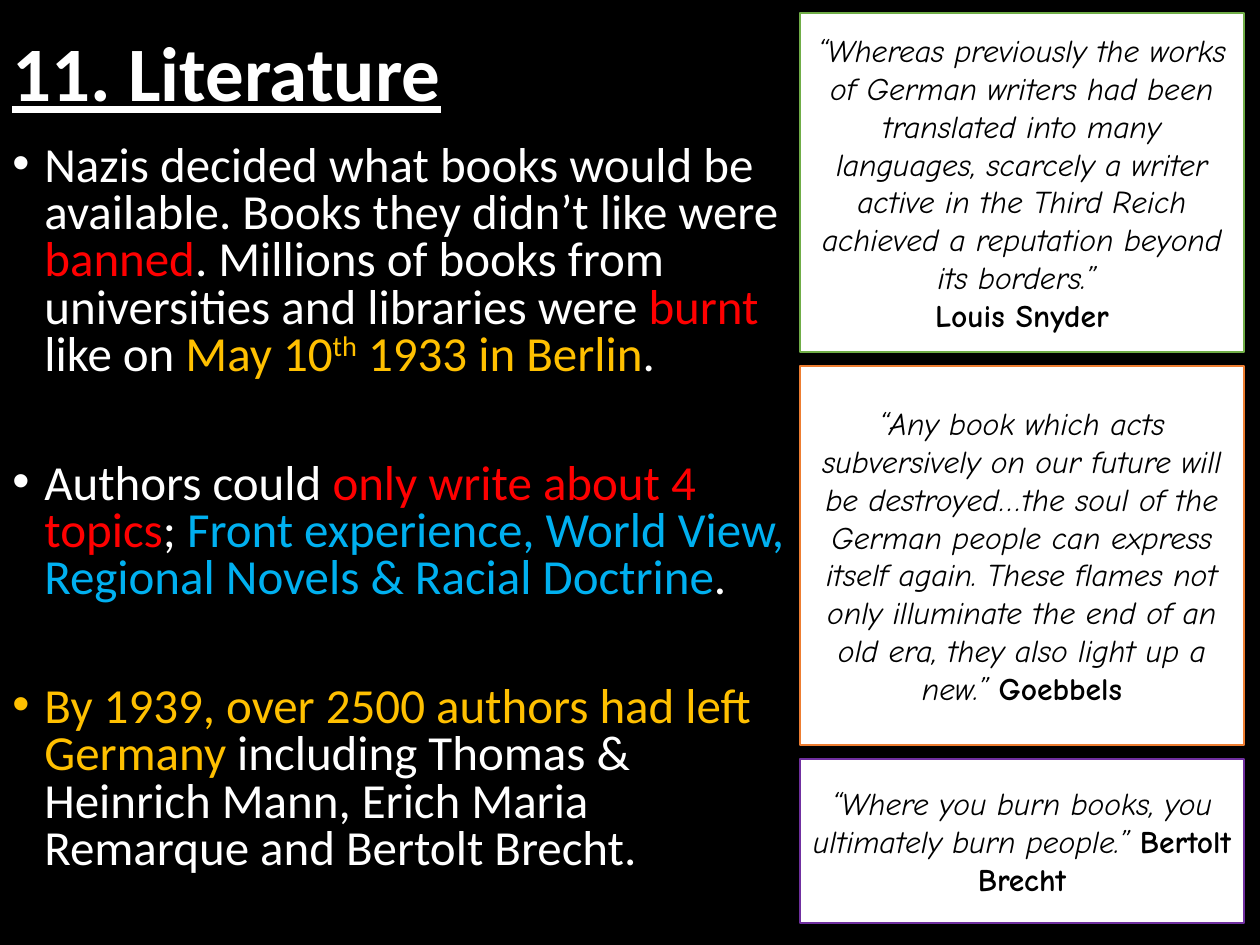
from pptx import Presentation
from pptx.dml.color import RGBColor as RGB
from pptx.enum.shapes import MSO_SHAPE as Form
from pptx.enum.text import MSO_ANCHOR as Anchor, PP_ALIGN as Align
from pptx.util import Pt
from lxml.etree import SubElement as Sub
from pptx.oxml.ns import qn

PX = 914400 / 126
WHITE, BLACK, RED, GOLD, BLUE = "FFFFFF", "000000", "FF0000", "FFC000", "00B0F0"


def emu(*px):
    return [round(n * PX) for n in px]


def hue(code):
    return RGB.from_string(code)


def put(obj, vals):
    for name, val in vals.items():
        setattr(obj, name, val)


class Deck:
    title = dict(name="Calibri", size=Pt(44), bold=True, underline=True)
    body = dict(name="Calibri", size=Pt(28))
    quote = dict(name="Comic Neue", size=Pt(18), italic=True)
    cite = dict(name="Comic Neue", size=Pt(18), bold=True)

    def __init__(self, wide, high):
        self.prs = Presentation()
        self.prs.slide_width, self.prs.slide_height = emu(wide, high)
        self.slide = self.prs.slides.add_slide(self.prs.slide_layouts[6])
        fill = self.slide.background.fill
        fill.solid()
        fill.fore_color.rgb = hue(BLACK)

    def run(self, para, text, color, style, base=0):
        run = para.add_run()
        run.text = text
        put(run.font, style)
        run.font.color.rgb = hue(color)
        if base:
            run.font._element.set("baseline", str(base * 1000))

    def box(self, *spot):
        frame = self.slide.shapes.add_textbox(*emu(*spot)).text_frame
        frame.word_wrap = True
        return frame

    def head(self, text, *spot):
        frame = self.box(*spot)
        frame.vertical_anchor = Anchor.MIDDLE
        para = frame.paragraphs[0]
        para.line_spacing = 0.9
        self.run(para, text, WHITE, self.title)

    def points(self, items, *spot):
        frame = self.box(*spot)
        for num, runs in enumerate(items):
            para = frame.add_paragraph() if num else frame.paragraphs[0]
            put(para, dict(line_spacing=0.8, space_before=Pt(47 if num else 0)))
            props = para._p.get_or_add_pPr()
            put_in = emu(32)[0]
            props.set("marL", str(put_in))
            props.set("indent", str(-put_in))
            Sub(props, qn("a:buFont"), typeface="Arial")
            Sub(props, qn("a:buChar"), char="•")
            for text, color, *base in runs:
                self.run(para, text, color, self.body, *base)

    def card(self, edge, words, name, apart, *spot):
        shape = self.slide.shapes.add_shape(Form.RECTANGLE, *emu(*spot))
        shape.shadow.inherit = False
        shape.fill.solid()
        shape.fill.fore_color.rgb = hue(WHITE)
        shape.line.color.rgb = hue(edge)
        shape.line.width = Pt(1)
        frame = shape.text_frame
        put(frame, dict(word_wrap=True, vertical_anchor=Anchor.MIDDLE))
        para = frame.paragraphs[0]
        self.run(para, words, BLACK, self.quote)
        if apart:
            para = frame.add_paragraph()
        self.run(para, name, BLACK, self.cite)
        for para in frame.paragraphs:
            para.alignment = Align.CENTER


POINTS = [
    [("Nazis decided what books would be available. Books they didn’t like were ", WHITE),
     ("banned", RED),
     (". Millions of books from universities and libraries were ", WHITE),
     ("burnt ", RED), ("like on ", WHITE),
     ("May 10", GOLD), ("th", GOLD, 30), (" 1933 in Berlin", GOLD), (".", WHITE)],
    [("Authors could ", WHITE), ("only write about 4 topics", RED), ("; ", WHITE),
     ("Front experience, World View, Regional Novels & Racial Doctrine", BLUE),
     (".", WHITE)],
    [("By 1939, over 2500 authors had left Germany ", GOLD),
     ("including Thomas & Heinrich Mann, Erich Maria Remarque and Bertolt Brecht.", WHITE)],
]

# Height, edge, words, speaker, speaker on a line of its own
QUOTES = [
    (339, "70AD47", "“Whereas previously the works of German writers had been translated "
     "into many languages, scarcely a writer active in the Third Reich achieved a "
     "reputation beyond its borders.” ", "Louis Snyder", True),
    (379, "ED7D31", "“Any book which acts subversively on our future will be "
     "destroyed…the soul of the German people can express itself again. These flames "
     "not only illuminate the end of an old era, they also light up a new.” ",
     "Goebbels", False),
    (164, "7030A0", "“Where you burn books, you ultimately burn people.” ",
     "Bertolt Brecht", False),
]


def main():
    deck = Deck(1260, 945)

    # Heading and bullet points
    deck.head("11. Literature", 0, 0, 1086, 154)
    deck.points(POINTS, 0, 139, 810, 806)

    # Column of quotes
    top, gap = 13, 14
    for high, edge, words, name, apart in QUOTES:
        deck.card(edge, words, name, apart, 800, top, 444, high)
        top += high + gap

    deck.prs.save("out.pptx")


if __name__ == "__main__":
    main()
